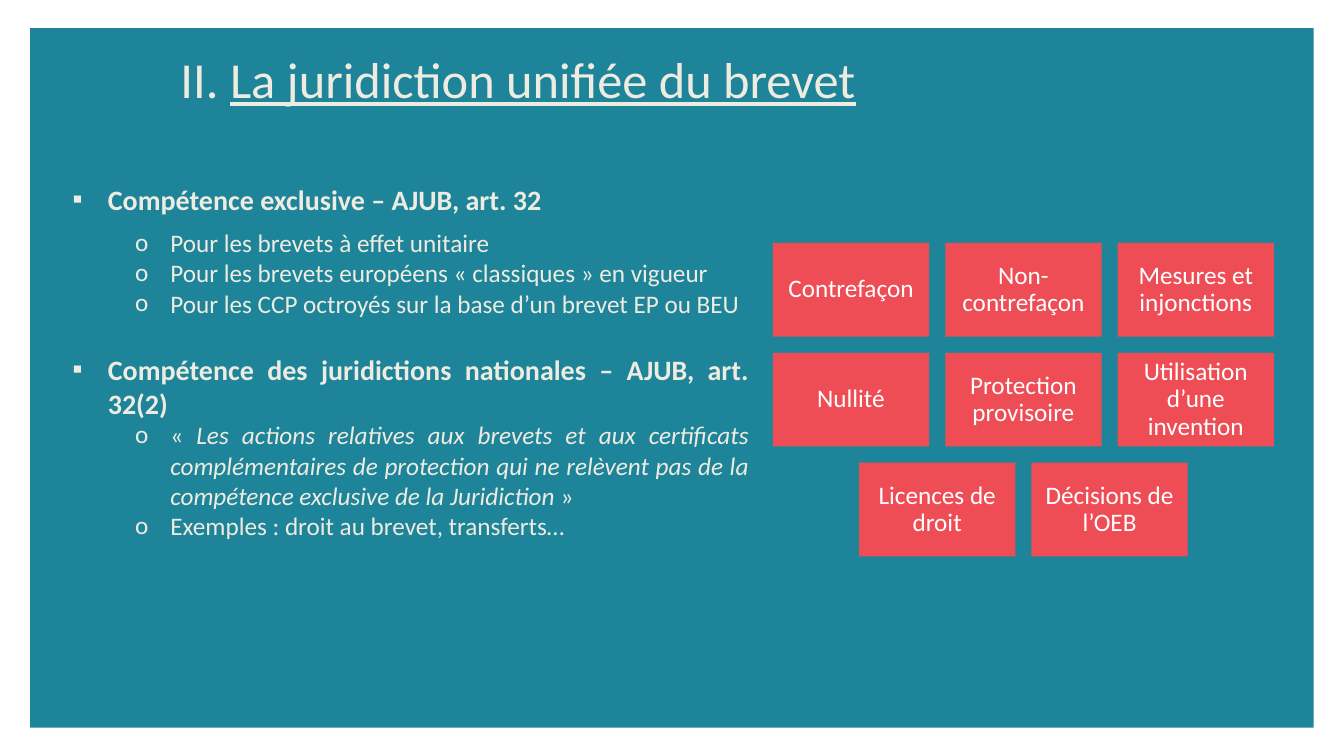
from dataclasses import dataclass

from lxml.etree import SubElement
from pptx import Presentation
from pptx.dml.color import RGBColor
from pptx.enum.shapes import MSO_SHAPE as Shape
from pptx.enum.text import MSO_ANCHOR as Anchor, MSO_AUTO_SIZE as AutoSize, PP_ALIGN as Align
from pptx.oxml.ns import qn
from pptx.util import Inches, Pt


@dataclass(frozen=True)
class Theme:
    font: str = "Calibri"
    teal: str = "1E8499"
    coral: str = "EE4D56"
    cream: str = "EEECE1"
    white: str = "FFFFFF"
    title_size: int = 36
    heading_size: int = 20
    detail_size: int = 18


theme = Theme()


def add_text(paragraph, text, size=theme.detail_size, color=theme.cream, **styles):
    """Append a run; styles are font attributes such as bold or underline."""
    run = paragraph.add_run()
    run.text = text
    run.font.name = theme.font
    run.font.size = Pt(size)
    run.font.color.rgb = RGBColor.from_string(color)
    for style, value in styles.items():
        setattr(run.font, style, value)


def set_indent(paragraph, left, hanging, bullet=None):
    """Set a hanging indent in inches, with an optional bullet character."""
    properties = paragraph._p.get_or_add_pPr()
    properties.set("marL", str(Inches(left)))
    properties.set("indent", str(-Inches(hanging)))
    if bullet:
        bullet_color = SubElement(properties, qn("a:buClr"))
        SubElement(bullet_color, qn("a:srgbClr"), val=theme.cream)
        SubElement(properties, qn("a:buFont"), typeface=theme.font)
        SubElement(properties, qn("a:buChar"), char=bullet)


prs = Presentation()
prs.slide_width, prs.slide_height = Inches(13.33), Inches(7.5)
slide = prs.slides.add_slide(prs.slide_layouts[1])
title, competences = slide.placeholders

# Coloured panel, behind the placeholders
panel = slide.shapes.add_shape(
    Shape.RECTANGLE, Inches(0.3), Inches(0.28), Inches(12.73), Inches(6.94))
panel.shadow.inherit = False
panel.fill.solid()
panel.fill.fore_color.rgb = RGBColor.from_string(theme.teal)
panel.line.fill.background()
title.element.addprevious(panel.element)

# Title
title.left, title.top = Inches(1.69), Inches(0.45)
title.width, title.height = Inches(8.56), Inches(0.74)
title.text_frame.auto_size = AutoSize.NONE
title.text_frame.vertical_anchor = Anchor.MIDDLE
heading = title.text_frame.paragraphs[0]
set_indent(heading, 0.27, 0.27)
heading.alignment = Align.LEFT
heading.line_spacing = 0.9
add_text(heading, "II. ", theme.title_size)
add_text(heading, "La juridiction unifiée du brevet", theme.title_size, underline=True)

# Competences: (level, space before in points, [(text, styles), ...])
bold, italic = {"bold": True}, {"italic": True}
outline = [
    (0, 0, [("Compétence exclusive – AJUB, art. 32", bold)]),
    (1, 8.5, [("Pour les brevets à effet unitaire", {})]),
    (1, 0, [("Pour les brevets européens « classiques » en vigueur", {})]),
    (1, 0, [("Pour les CCP octroyés sur la base d’un brevet EP ou BEU", {})]),
    (0, 24.4, [("Compétence des juridictions nationales – AJUB, art. 32(2)", bold)]),
    (1, 0, [("« ", {}),
            ("Les actions relatives aux brevets et aux certificats complémentaires "
             "de protection qui ne relèvent pas de la compétence exclusive "
             "de la Juridiction ", italic),
            ("»", {})]),
    (1, 0, [("Exemples : droit au brevet, transferts…", {})]),
]
levels = [(0.71, "▪", theme.heading_size), (1.33, "o", theme.detail_size)]

competences.left, competences.top = Inches(0.36), Inches(1.81)
competences.width, competences.height = Inches(7.07), Inches(3.55)
body = competences.text_frame
body.auto_size = AutoSize.NONE
body.vertical_anchor = Anchor.MIDDLE
body.margin_left = body.margin_right = body.margin_top = body.margin_bottom = 0
for index, (level, space_before, pieces) in enumerate(outline):
    item = body.add_paragraph() if index else body.paragraphs[0]
    left, bullet, size = levels[level]
    set_indent(item, left, 0.35, bullet)
    item.level = level
    item.alignment = Align.JUSTIFY
    item.space_before = Pt(space_before)
    for text, styles in pieces:
        add_text(item, text, size, **styles)

# Kinds of action, each row centred on the same axis
action_rows = [
    ["Contrefaçon", "Non-contrefaçon", "Mesures et injonctions"],
    ["Nullité", "Protection provisoire", "Utilisation d’une invention"],
    ["Licences de droit", "Décisions de l’OEB"],
]
tile_width, tile_height = 1.55, 0.93
column_step, row_step = 1.71, 1.09
grid_center, grid_top = 10.15, 2.41
for row, actions in enumerate(action_rows):
    row_left = grid_center - ((len(actions) - 1) * column_step + tile_width) / 2
    for column, action in enumerate(actions):
        tile = slide.shapes.add_shape(
            Shape.RECTANGLE,
            Inches(row_left + column * column_step), Inches(grid_top + row * row_step),
            Inches(tile_width), Inches(tile_height))
        tile.shadow.inherit = False
        tile.fill.solid()
        tile.fill.fore_color.rgb = RGBColor.from_string(theme.coral)
        tile.line.fill.background()
        frame = tile.text_frame
        frame.word_wrap = True
        frame.vertical_anchor = Anchor.MIDDLE
        frame.margin_left = frame.margin_right = Inches(0.07)
        frame.margin_top = frame.margin_bottom = Inches(0.07)
        label = frame.paragraphs[0]
        label.alignment = Align.CENTER
        label.line_spacing = 0.9
        add_text(label, action, color=theme.white)

prs.save("out.pptx")
